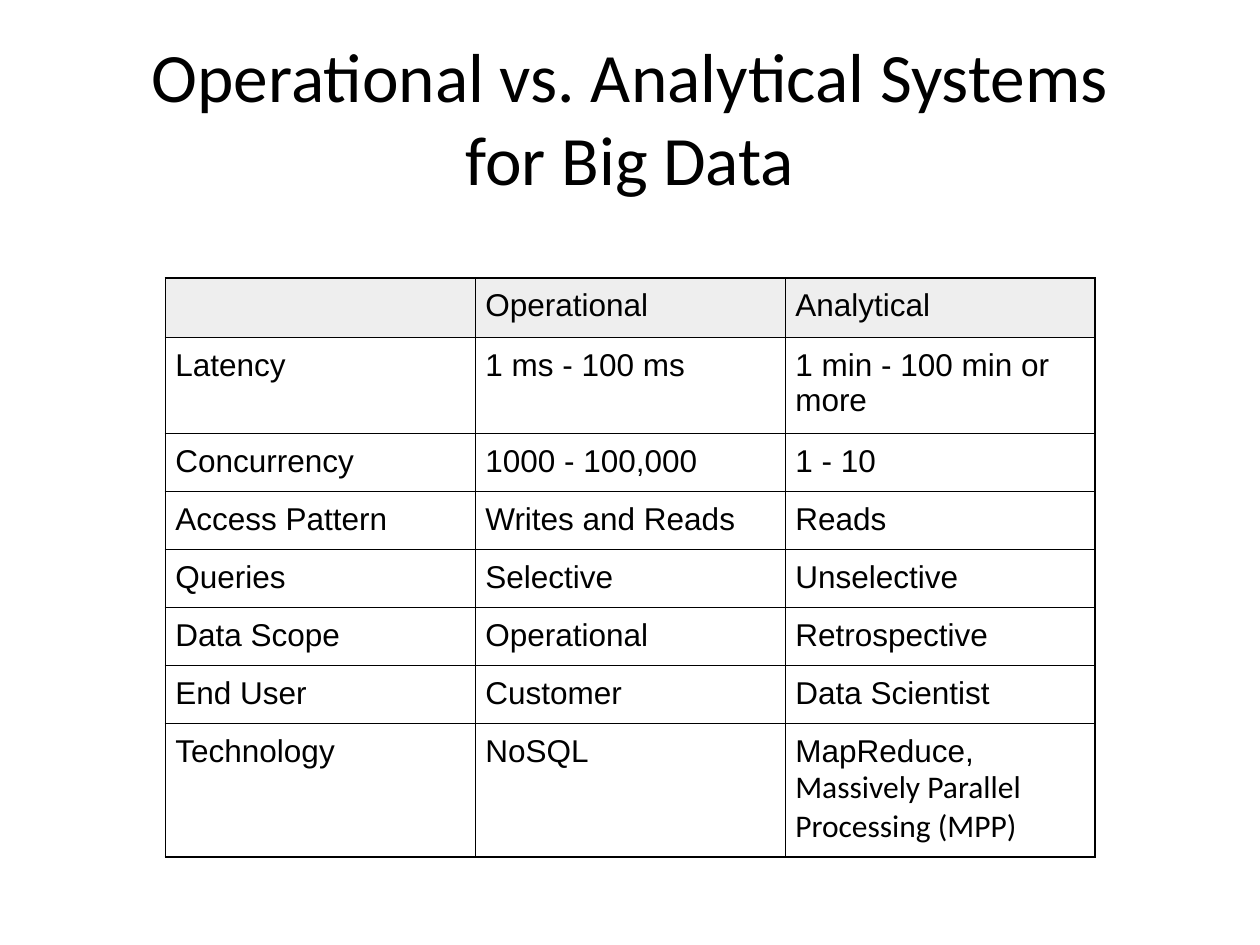
from typing import NamedTuple

from lxml import etree
from pptx import Presentation
from pptx.dml.color import RGBColor
from pptx.enum.text import MSO_ANCHOR, PP_ALIGN
from pptx.oxml.ns import qn
from pptx.util import Pt

MIDDLE = MSO_ANCHOR.MIDDLE
CENTER = PP_ALIGN.CENTER
BLACK = RGBColor(0x00, 0x00, 0x00)
HEADER_GREY = RGBColor(0xEE, 0xEE, 0xEE)
TITLE_FONT = {"name": "Calibri", "size": Pt(39.6)}
CELL_FONT = {"name": "Arial", "size": Pt(18)}
NOTE_FONT = {"name": "Calibri", "size": Pt(18)}
CELL_MARGIN = Pt(5.76)
COL_WIDTH = Pt(177.12)


class Row(NamedTuple):
    """One table row: its cell texts, height and an optional note in the last cell."""
    texts: tuple[str, str, str]
    height: float = 32.15
    note: str = ""


ROWS = [
    Row(("", "Operational", "Analytical"), 34),
    Row(("Latency", "1 ms - 100 ms", "1 min - 100 min or more"), 52.5),
    Row(("Concurrency", "1000 - 100,000", "1 - 10")),
    Row(("Access Pattern", "Writes and Reads", "Reads")),
    Row(("Queries", "Selective", "Unselective")),
    Row(("Data Scope", "Operational", "Retrospective")),
    Row(("End User", "Customer", "Data Scientist")),
    Row(("Technology", "NoSQL", "MapReduce, "), 76, "Massively Parallel Processing (MPP)"),
]


def add_run(p, text: str, font: dict) -> None:
    """Append a black run with the given font values."""
    r = p.add_run()
    r.text = text
    r.font.color.rgb = BLACK
    for key, value in font.items():
        setattr(r.font, key, value)


def add_title(s, lines: list[str]) -> None:
    """Draw the centred title, one line per entry."""
    tf = s.shapes.add_textbox(Pt(36), Pt(21.6), Pt(648), Pt(90)).text_frame
    tf.word_wrap = True
    tf.vertical_anchor = MIDDLE
    p = tf.paragraphs[0]
    p.alignment = CENTER
    for i, line in enumerate(lines):
        if i:
            p.add_line_break()
        add_run(p, line, TITLE_FONT)


def add_borders(cell) -> None:
    """Give a cell a thin black line on all four sides."""
    tc_pr = cell._tc.get_or_add_tcPr()
    for side in ("a:lnL", "a:lnR", "a:lnT", "a:lnB"):
        ln = etree.SubElement(tc_pr, qn(side), w=str(Pt(1)))
        fill = etree.SubElement(ln, qn("a:solidFill"))
        etree.SubElement(fill, qn("a:srgbClr"), val=str(BLACK))


def format_cell(cell, is_header: bool) -> None:
    """Set margins, borders and fill of a cell."""
    for side in ("left", "right", "top", "bottom"):
        setattr(cell, f"margin_{side}", CELL_MARGIN)
    add_borders(cell)
    if is_header:
        cell.fill.solid()
        cell.fill.fore_color.rgb = HEADER_GREY
    else:
        cell.fill.background()


def add_comparison(s, rows: list[Row]) -> None:
    """Draw the comparison table."""
    cols = len(rows[0].texts)
    height = Pt(sum(row.height for row in rows))
    table = s.shapes.add_table(
        len(rows), cols, Pt(94.5), Pt(159), COL_WIDTH * cols, height
    ).table
    table.first_row = table.horz_banding = False
    for col in table.columns:
        col.width = COL_WIDTH
    for i, row in enumerate(rows):
        table.rows[i].height = Pt(row.height)
        for j, text in enumerate(row.texts):
            cell = table.cell(i, j)
            format_cell(cell, i == 0)
            if text:
                add_run(cell.text_frame.paragraphs[0], text, CELL_FONT)
        if row.note:
            add_run(cell.text_frame.paragraphs[0], row.note, NOTE_FONT)


def main() -> None:
    """Build and save the slide."""
    prs = Presentation()
    prs.slide_width, prs.slide_height = Pt(720), Pt(540)
    s = prs.slides.add_slide(prs.slide_layouts[6])
    add_title(s, ["Operational vs. Analytical Systems", "for Big Data"])
    add_comparison(s, ROWS)
    prs.save("out.pptx")


if __name__ == "__main__":
    main()
